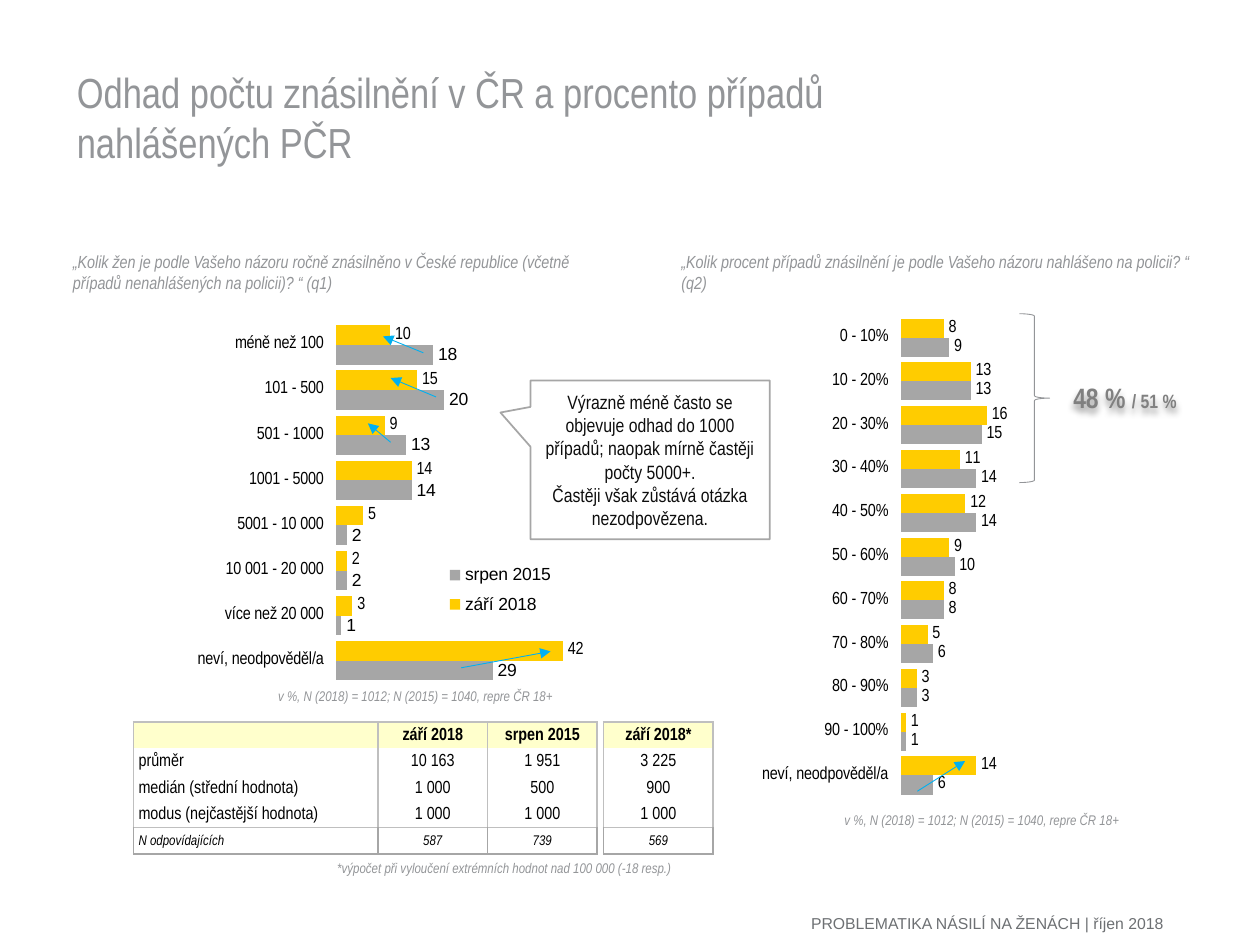
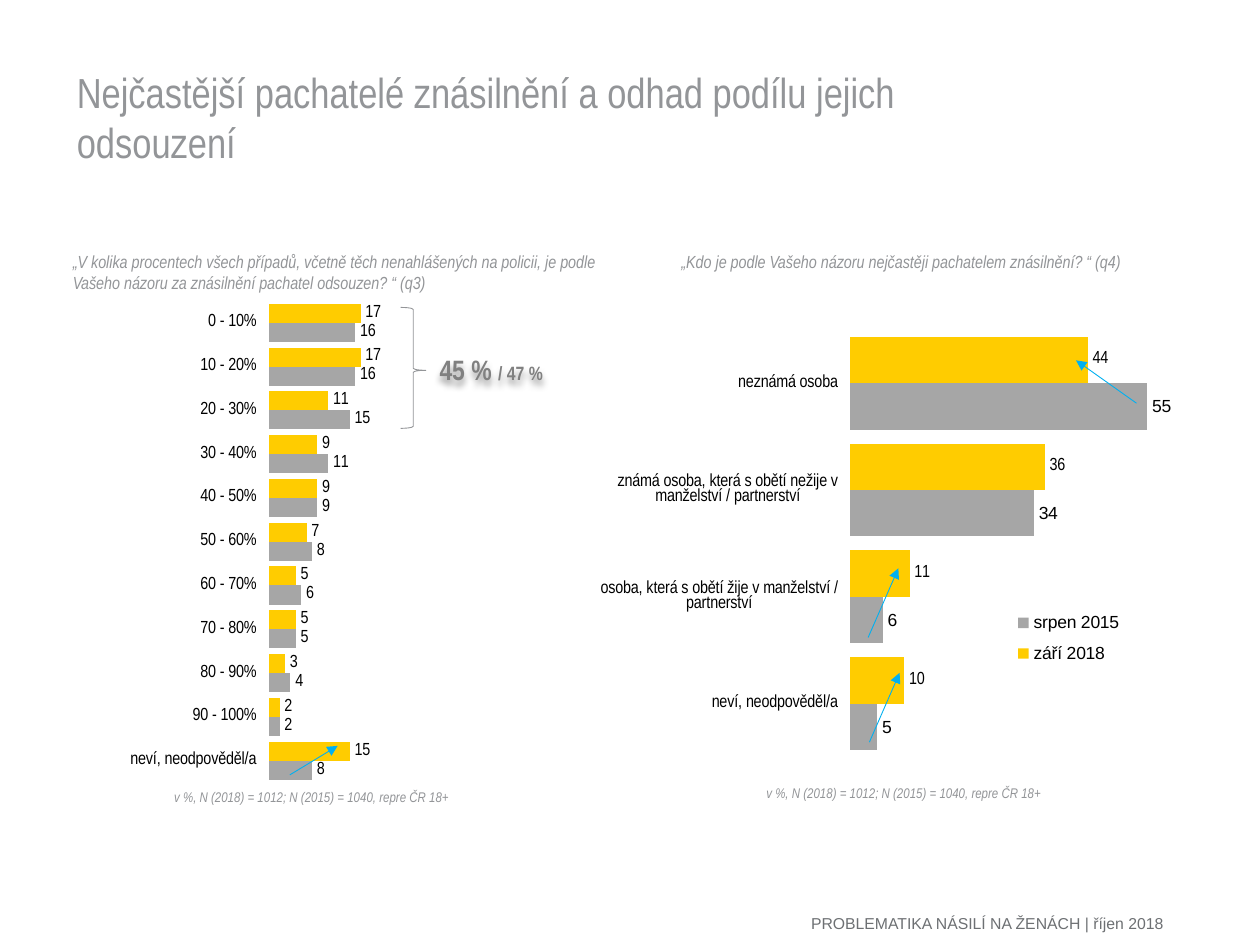
from lxml import etree
from pptx import Presentation
from pptx.chart.data import CategoryChartData
from pptx.dml.color import RGBColor
from pptx.enum.chart import XL_CHART_TYPE, XL_LABEL_POSITION, XL_LEGEND_POSITION
from pptx.enum.shapes import MSO_CONNECTOR, MSO_SHAPE
from pptx.enum.text import MSO_ANCHOR, MSO_AUTO_SIZE, PP_ALIGN
from pptx.oxml import parse_xml
from pptx.oxml.ns import nsdecls, qn
from pptx.util import Pt

PX = 9144  # 100 px to the inch
BARS = XL_CHART_TYPE.BAR_CLUSTERED
OUT_END = XL_LABEL_POSITION.OUTSIDE_END
RIGHT_SIDE = XL_LEGEND_POSITION.RIGHT
STRAIGHT = MSO_CONNECTOR.STRAIGHT
BRACE = MSO_SHAPE.RIGHT_BRACE
CALLOUT = MSO_SHAPE.RECTANGULAR_CALLOUT
TOP, MIDDLE, BOTTOM = MSO_ANCHOR.TOP, MSO_ANCHOR.MIDDLE, MSO_ANCHOR.BOTTOM
LEFT, CENTER, RIGHT = PP_ALIGN.LEFT, PP_ALIGN.CENTER, PP_ALIGN.RIGHT
NO_FIT = MSO_AUTO_SIZE.NONE

BLACK = RGBColor(0x00, 0x00, 0x00)
INK = RGBColor(0x0D, 0x0D, 0x0D)
GREY = RGBColor(0x93, 0x95, 0x98)
DARK = RGBColor(0x80, 0x80, 0x80)
FOOT = RGBColor(0x6D, 0x70, 0x73)
SILVER = RGBColor(0xA6, 0xA6, 0xA6)
RULE = RGBColor(0xBF, 0xBF, 0xBF)
GOLD = RGBColor(0xFF, 0xCC, 0x00)
CREAM = RGBColor(0xFF, 0xFF, 0xCC)
BLUE = RGBColor(0x00, 0xB0, 0xF0)

SANS, NARROW = "Arial", "Arial Narrow"
FOOTER = "PROBLEMATIKA NÁSILÍ NA ŽENÁCH | říjen 2018"
BASE = "v %, N (2018) = 1012; N (2015) = 1040, repre ČR 18+"
UNSURE = "neví, neodpověděl/a"
TENTHS = ["0 - 10%"] + [f"{n} - {n + 10}%" for n in range(10, 100, 10)] + [UNSURE]


def paint(font, size, color, name=NARROW, bold=False, italic=False):
    font.size, font.name = Pt(size), name
    font.bold, font.italic = bold, italic
    font.color.rgb = color


def place(parent, spot, box):
    """Give a chart part a fixed layout, as fractions of the chart."""
    for old in parent.findall(qn("c:layout")):
        parent.remove(old)
    inner = '<c:layoutTarget val="inner"/>' if parent.tag == qn("c:plotArea") else ""
    modes = '<c:xMode val="edge"/><c:yMode val="edge"/>'
    sizes = "".join(f'<c:{k} val="{v}"/>' for k, v in zip("xywh", box))
    parent.insert(spot, parse_xml(
        f'<c:layout {nsdecls("c")}><c:manualLayout>{inner}{modes}{sizes}'
        '</c:manualLayout></c:layout>'))


def edge(side, color):
    """Make one side of a cell, clear when there is no colour."""
    fill = (f'<a:solidFill><a:srgbClr val="{color}"/></a:solidFill>'
            if color else "<a:noFill/>")
    return parse_xml(f'<a:ln{side} {nsdecls("a")} w="12700">{fill}</a:ln{side}>')


class Deck:
    def __init__(self):
        self.prs = Presentation()
        self.prs.slide_width, self.prs.slide_height = 1000 * PX, 750 * PX
        self.slide = None

    def add(self, title):
        """Start a slide with its title and footer."""
        self.slide = self.prs.slides.add_slide(self.prs.slide_layouts[5])
        head = self.slide.shapes.title
        head.left, head.top, head.width, head.height = self.scale(51, 30, 701, 125)
        self.style(head.text_frame, title, 24, GREY, anchor=MIDDLE)
        self.text((49, 706, 884, 39), FOOTER, 9, FOOT, SANS,
                  align=RIGHT, anchor=BOTTOM)

    def scale(self, *px):
        return [n * PX for n in px]

    def style(self, frame, text, size, color, name=NARROW,
              align=LEFT, anchor=TOP, italic=False):
        """Set the text of a frame and format it."""
        frame.text = text
        frame.word_wrap, frame.auto_size = True, NO_FIT
        frame.vertical_anchor = anchor
        for para in frame.paragraphs:
            para.alignment = align
            for run in para.runs:
                paint(run.font, size, color, name, italic=italic)

    def text(self, box, text, size, color, name=NARROW, **style):
        shape = self.slide.shapes.add_textbox(*self.scale(*box))
        self.style(shape.text_frame, text, size, color, name, **style)
        return shape

    def ask(self, x, text):
        """Set the survey question above a chart."""
        self.text((x, 194, 439, 32), text, 10, GREY, italic=True)

    def note(self, x, y, w, text):
        self.text((x, y, w, 24), text, 8, GREY, align=CENTER, italic=True)

    def total(self, x, y, now, past):
        """Set a summed share with a soft shadow."""
        shape = self.text((x, y, 120, 37), now, 16, DARK)
        para = shape.text_frame.paragraphs[0]
        para.runs[0].font.bold = True
        run = para.add_run()
        run.text = past
        paint(run.font, 11, DARK, bold=True)
        shape._element.spPr.append(parse_xml(
            f'<a:effectLst {nsdecls("a")}><a:outerShdw blurRad="50800" dist="38100" '
            'dir="5400000" algn="t" rotWithShape="0"><a:srgbClr val="000000">'
            '<a:alpha val="40000"/></a:srgbClr></a:outerShdw></a:effectLst>'))

    def shape(self, kind, box, line, width, adjust):
        item = self.slide.shapes.add_shape(kind, *self.scale(*box))
        item.shadow.inherit = False
        item.fill.background()
        item.line.color.rgb, item.line.width = line, Pt(width)
        for i, value in enumerate(adjust):
            item.adjustments[i] = value
        return item

    def brace(self, box, mid=0.5):
        self.shape(BRACE, box, GREY, 0.5, (0.08, mid))

    def callout(self, box, text):
        item = self.shape(CALLOUT, box, SILVER, 1, (-0.625, -0.298))
        self.style(item.text_frame, text, 11, INK, align=CENTER, anchor=MIDDLE)

    def arrow(self, *ends):
        line = self.slide.shapes.add_connector(STRAIGHT, *self.scale(*ends))
        line.line.color.rgb, line.line.width = BLUE, Pt(0.5)
        etree.SubElement(line.line._get_or_add_ln(), qn("a:tailEnd"), type="triangle")
        etree.SubElement(line._element.spPr, qn("a:effectLst"))

    def chart(self, box, names, now, past, key=None, plot=(0.463, 0.044)):
        """Draw paired bars; key is the place of the legend, if any."""
        data = CategoryChartData()
        data.categories = names
        data.add_series("září 2018", now)
        data.add_series("srpen 2015", past)
        chart = self.slide.shapes.add_chart(BARS, *self.scale(*box), data).chart
        chart.has_title = False
        paint(chart.font, 10, BLACK, SANS)
        place(chart._chartSpace.chart.plotArea, 0, (*plot, 0.537, 0.951))

        axis = chart.category_axis
        axis.reverse_order = True
        axis.format.line.fill.background()
        paint(axis.tick_labels.font, 10, BLACK)
        scale = chart.value_axis
        scale.minimum_scale, scale.maximum_scale, scale.major_unit = 0, 60, 10
        scale.has_major_gridlines = scale.visible = False

        bars = chart.plots[0]
        bars.gap_width, bars.overlap, bars.vary_by_categories = 30, 0, False
        faces = (NARROW, SANS if key else NARROW)
        for row, color, face in zip(bars.series, (GOLD, SILVER), faces):
            row.format.fill.solid()
            row.format.fill.fore_color.rgb = color
            tags = row.data_labels
            tags.show_value, tags.position = True, OUT_END
            tags.number_format, tags.number_format_is_linked = "0", False
            paint(tags.font, 10, BLACK, face)

        chart.has_legend = key is not None
        if key:
            legend = chart.legend
            legend.position, legend.include_in_layout = RIGHT_SIDE, False
            paint(legend.font, 10, BLACK, SANS)
            place(legend._element, 1, (*key, 0.23, 0.16))

    def table(self, x, y, widths, rows):
        high, last = 21, len(rows) - 1
        grid = self.slide.shapes.add_table(
            len(rows), len(widths),
            *self.scale(x, y, sum(widths), high * len(rows))).table
        grid.first_row = grid.horz_banding = False
        for col, width in zip(grid.columns, widths):
            col.width = width * PX
        for r, row in enumerate(rows):
            grid.rows[r].height = high * PX
            for c, text in enumerate(row):
                label = c == 0 and len(row) > 1
                self.cell(grid.cell(r, c), text, label, r == 0, r == last, r == last - 1)

    def cell(self, cell, text, label, first, last, above):
        cell.margin_left, cell.margin_right = self.scale(4 if label else 1, 1)
        cell.margin_top, cell.margin_bottom = self.scale(1, 0)
        cell.vertical_anchor = MIDDLE
        cell.text = text
        para = cell.text_frame.paragraphs[0]
        para.alignment = LEFT if label else CENTER
        for run in para.runs:
            paint(run.font, 8 if last else 10, BLACK, bold=first, italic=last)
        if not text:
            etree.SubElement(para._p, qn("a:endParaRPr"), sz="1000")
        side = SILVER if last else RULE
        colors = {"L": side, "R": side,
                  "T": RULE if first or last else None,
                  "B": SILVER if last else RULE if above else None}
        props = cell._tc.get_or_add_tcPr()
        for name, color in colors.items():
            props.append(edge(name, color))
        if first:
            cell.fill.solid()
            cell.fill.fore_color.rgb = CREAM
        else:
            cell.fill.background()


def guess(deck):
    deck.add("Odhad počtu znásilnění v ČR a procento případů nahlášených PČR")
    deck.ask(48, "„Kolik žen je podle Vašeho názoru ročně znásilněno v České "
                 "republice (včetně případů nenahlášených na policii)? “ (q1)")
    counts = ["méně než 100", "101 - 500", "501 - 1000", "1001 - 5000",
              "5001 - 10 000", "10 001 - 20 000", "více než 20 000", UNSURE, ""]
    deck.chart((45, 241, 479, 339), counts,
               (10, 15, 9, 14, 5, 2, 3, 42, None),
               (18, 20, 13, 14, 2, 2, 1, 29, None), key=(0.62, 0.59))
    deck.note(184, 541, 292, BASE)
    deck.ask(531, "„Kolik procent případů znásilnění je podle Vašeho názoru "
                  "nahlášeno na policii? “ (q2)")
    deck.chart((493, 233, 479, 402), TENTHS,
               (8, 13, 16, 11, 12, 9, 8, 5, 3, 1, 14),
               (9, 13, 15, 14, 14, 10, 8, 6, 3, 1, 6))
    deck.note(625, 639, 309, BASE)
    deck.brace((809, 249, 24, 134))
    deck.total(842, 297, "48 % ", "/ 51 %")
    deck.table(106, 573, (194, 87, 87), [
        ("", "září 2018", "srpen 2015"),
        ("průměr", "10 163", "1 951"),
        ("medián (střední hodnota)", "1 000", "500"),
        ("modus (nejčastější hodnota)", "1 000", "1 000"),
        ("N odpovídajících", "587", "739")])
    deck.callout((421, 302, 190, 126),
                 "Výrazně méně často se objevuje odhad do 1000 případů; naopak "
                 "mírně častěji počty 5000+.\n"
                 "Častěji však zůstává otázka nezodpovězena.")
    for ends in ((728, 628, 766, 604), (366, 530, 437, 517), (336, 280, 304, 267),
                 (346, 315, 310, 300), (310, 351, 292, 336)):
        deck.arrow(*ends)
    deck.table(479, 573, (87,),
               [("září 2018*",), ("3 225",), ("900",), ("1 000",), ("569",)])
    deck.note(220, 677, 361,
              "*výpočet při vyloučení extrémních hodnot nad 100 000 (-18 resp.)")


def blame(deck):
    deck.add("Nejčastější pachatelé znásilnění a odhad podílu jejich odsouzení")
    deck.chart((-7, 228, 479, 402), TENTHS,
               (17, 17, 11, 9, 9, 7, 5, 5, 3, 2, 15),
               (16, 16, 15, 11, 9, 8, 6, 5, 4, 2, 8), plot=(0.46, 0.027))
    deck.ask(48, "„V kolika procentech všech případů, včetně těch nenahlášených na "
                 "policii, je podle Vašeho názoru za znásilnění pachatel odsouzen? “ (q3)")
    deck.ask(531, "„Kdo je podle Vašeho názoru nejčastěji pachatelem znásilnění? “ (q4)")
    deck.brace((318, 244, 20, 96), 0.52)
    people = ["neznámá osoba",
              "známá osoba, která s obětí nežije v manželství / partnerství",
              "osoba, která s obětí žije v manželství / partnerství", UNSURE]
    deck.chart((453, 246, 479, 357), people,
               (44, 36, 11, 10), (55, 34, 6, 5), key=(0.71, 0.65))
    deck.note(93, 621, 309, BASE)
    deck.total(339, 275, "45 % ", "/ 47 %")
    deck.note(563, 618, 309, BASE)
    for ends in ((689, 506, 713, 451), (690, 589, 714, 534),
                 (902, 320, 854, 286), (230, 615, 268, 592)):
        deck.arrow(*ends)


def main():
    deck = Deck()
    guess(deck)
    blame(deck)
    deck.prs.save("out.pptx")


if __name__ == "__main__":
    main()
